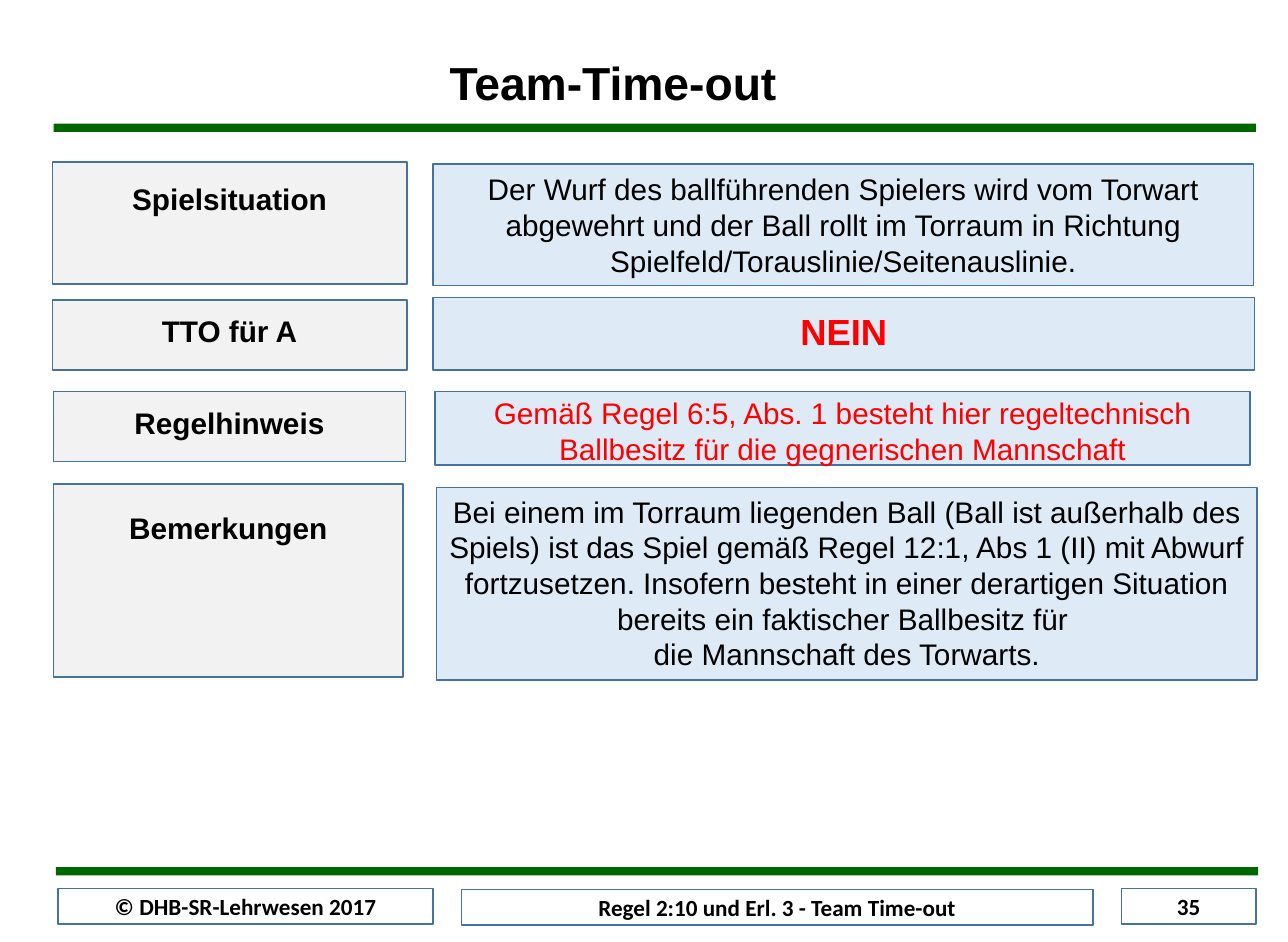
"""Build the team time-out rule slide."""
from pptx import Presentation
from pptx.dml.color import RGBColor
from pptx.enum.shapes import MSO_SHAPE as Shape
from pptx.enum.text import MSO_ANCHOR as Anchor, MSO_AUTO_SIZE as AutoSize, PP_ALIGN as Align
from pptx.util import Inches, Pt

COLORS = {"green": "006600", "border": "43739E", "label": "F2F2F2", "answer": "DEEBF7",
          "white": "FFFFFF", "black": "000000", "red": "FF0000"}

TITLE = "Team-Time-out"
BARS = [(0.45, 1.04, 10.11, 0.07), (0.47, 7.29, 10.11, 0.07)]
LABELS = [
    ("Spielsituation", (0.44, 1.36, 2.98, 1.03), 0.16),
    ("TTO für A", (0.44, 2.52, 2.98, 0.59), 0.11),
    ("Regelhinweis", (0.45, 3.29, 2.96, 0.59), 0.11),
    ("Bemerkungen", (0.45, 4.07, 2.94, 1.62), 0.22),
]
ANSWERS = [
    ("Der Wurf des ballführenden Spielers wird vom Torwart abgewehrt und der Ball rollt "
     "im Torraum in Richtung Spielfeld/Torauslinie/Seitenauslinie.",
     (3.64, 1.38, 6.9, 1.02), 0.06, {}),
    ("NEIN", (3.64, 2.5, 6.91, 0.61), 0.1, {"size": 22, "bold": True, "color": "red"}),
    ("Gemäß Regel 6:5, Abs. 1 besteht hier regeltechnisch Ballbesitz für die "
     "gegnerischen Mannschaft", (3.66, 3.29, 6.85, 0.62), 0.03, {"color": "red"}),
    ("Bei einem im Torraum liegenden Ball (Ball ist außerhalb des Spiels) ist das Spiel "
     "gemäß Regel 12:1, Abs 1 (II) mit Abwurf fortzusetzen. Insofern besteht in einer "
     "derartigen Situation bereits ein faktischer Ballbesitz für \n"
     "die Mannschaft des Torwarts.", (3.67, 4.1, 6.9, 1.62), 0.05, {}),
]
FOOTERS = [
    ("© DHB-SR-Lehrwesen 2017", (0.49, 7.47, 3.15, 0.3)),
    ("Regel 2:10 und Erl. 3 - Team Time-out", (3.88, 7.48, 5.31, 0.3)),
    ("35", (9.43, 7.47, 1.13, 0.3)),
]


def rgb(name):
    """Return the named colour."""
    return RGBColor.from_string(COLORS[name])


def write(shape, text, size=18, font="Arial", bold=False, color="black",
          align=Align.CENTER, anchor=Anchor.TOP, top=0.05, wrap=True):
    """Put formatted text into a shape."""
    frame = shape.text_frame
    frame.word_wrap = wrap
    frame.auto_size = AutoSize.NONE
    frame.vertical_anchor = anchor
    frame.margin_left = frame.margin_right = Inches(0.1)
    frame.margin_top, frame.margin_bottom = Inches(top), 0
    para = frame.paragraphs[0]
    para.text = text
    para.alignment = align
    for span in para.runs:
        span.font.name, span.font.size, span.font.bold = font, Pt(size), bold
        span.font.color.rgb = rgb(color)


def add_box(page, place, fill, border=None):
    """Add a filled rectangle, with a thin border if one is named."""
    box = page.shapes.add_shape(Shape.RECTANGLE, *map(Inches, place))
    box.shadow.inherit = False
    box.fill.solid()
    box.fill.fore_color.rgb = rgb(fill)
    if border:
        box.line.color.rgb = rgb(border)
        box.line.width = Pt(1)
    else:
        box.line.fill.background()
    return box


def main():
    """Build and save the deck."""
    deck = Presentation()
    deck.slide_width, deck.slide_height = Inches(10.83), Inches(7.92)
    page = deck.slides.add_slide(deck.slide_layouts[5])

    title = page.shapes.title
    title.left, title.top, title.width, title.height = map(Inches, (3.68, 0.41, 2.98, 0.57))
    write(title, TITLE, size=28, bold=True, align=Align.LEFT, wrap=False)

    for place in BARS:
        add_box(page, place, "green")
    for text, place, top in LABELS:
        write(add_box(page, place, "label", "border"), text, bold=True, top=top)
    for text, place, top, style in ANSWERS:
        write(add_box(page, place, "answer", "border"), text, top=top, **style)
    for text, place in FOOTERS:
        write(add_box(page, place, "white", "border"), text, size=14, font="Calibri",
              bold=True, anchor=Anchor.MIDDLE, top=0)

    deck.save("out.pptx")


if __name__ == "__main__":
    main()
